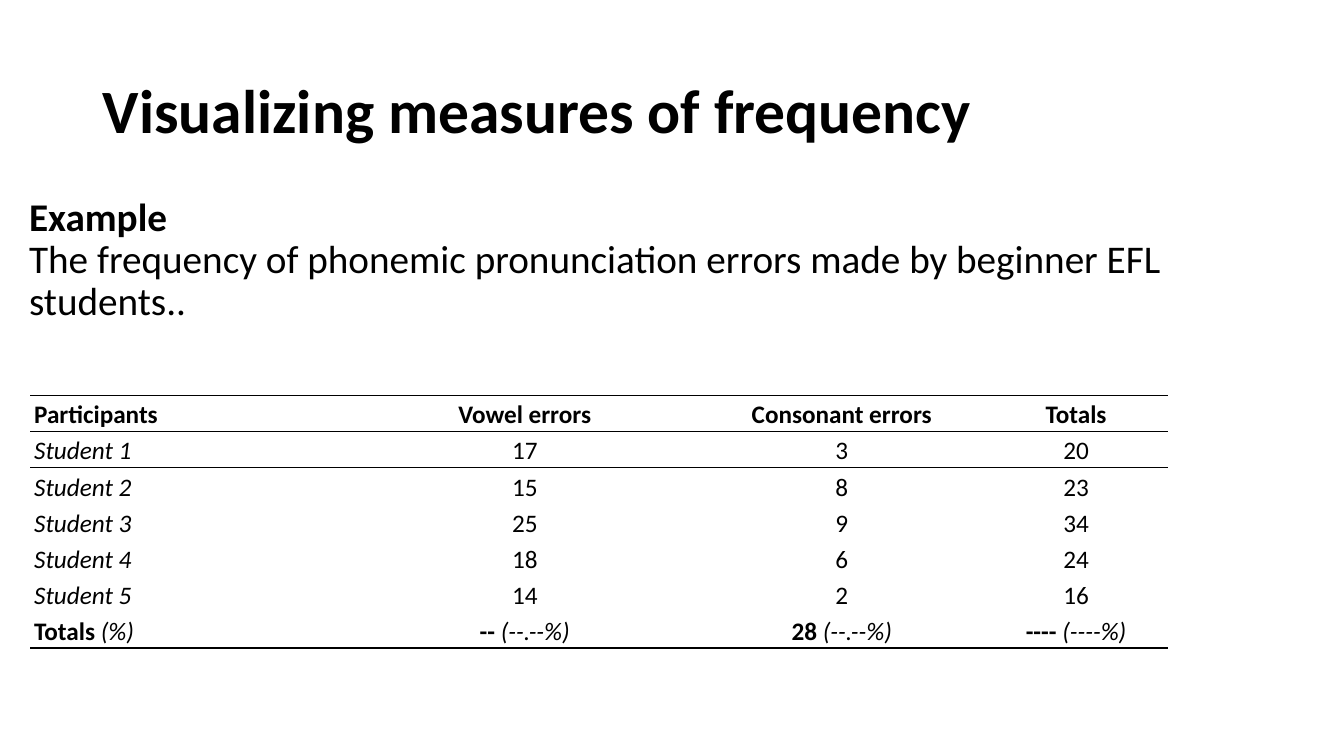
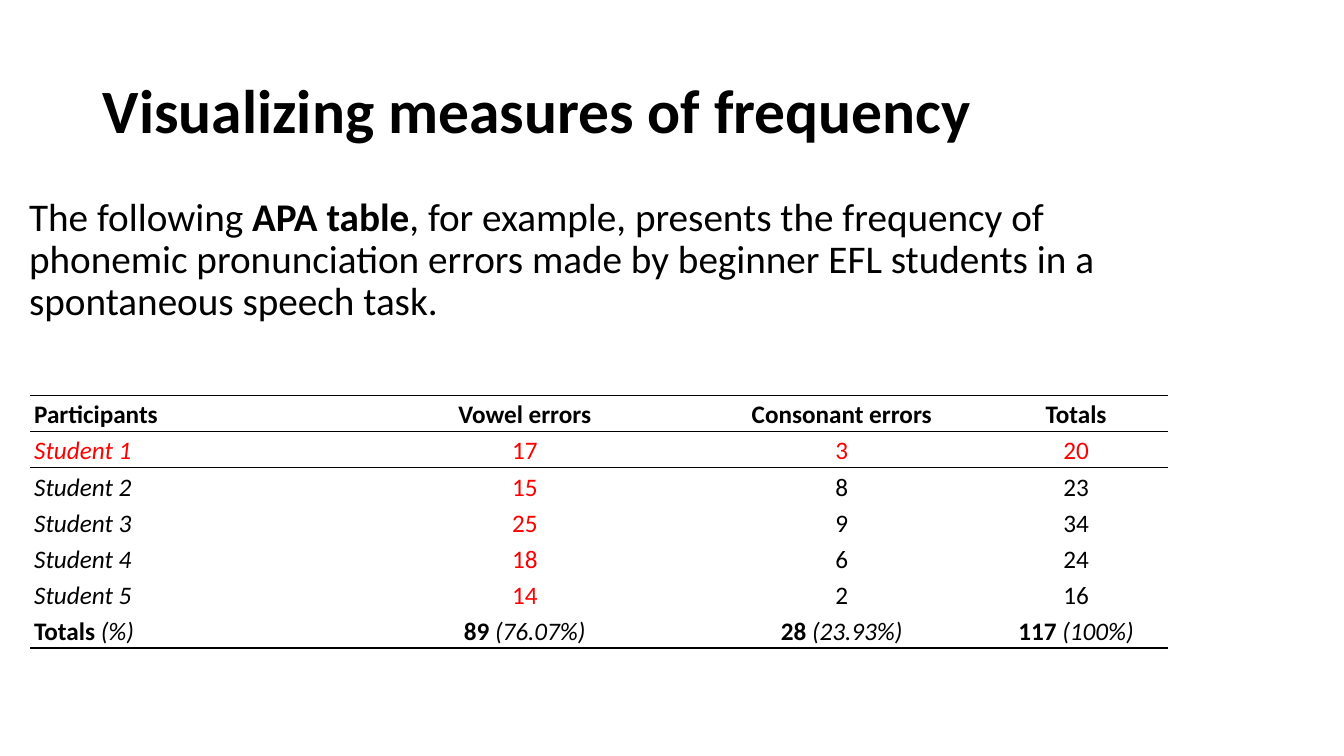
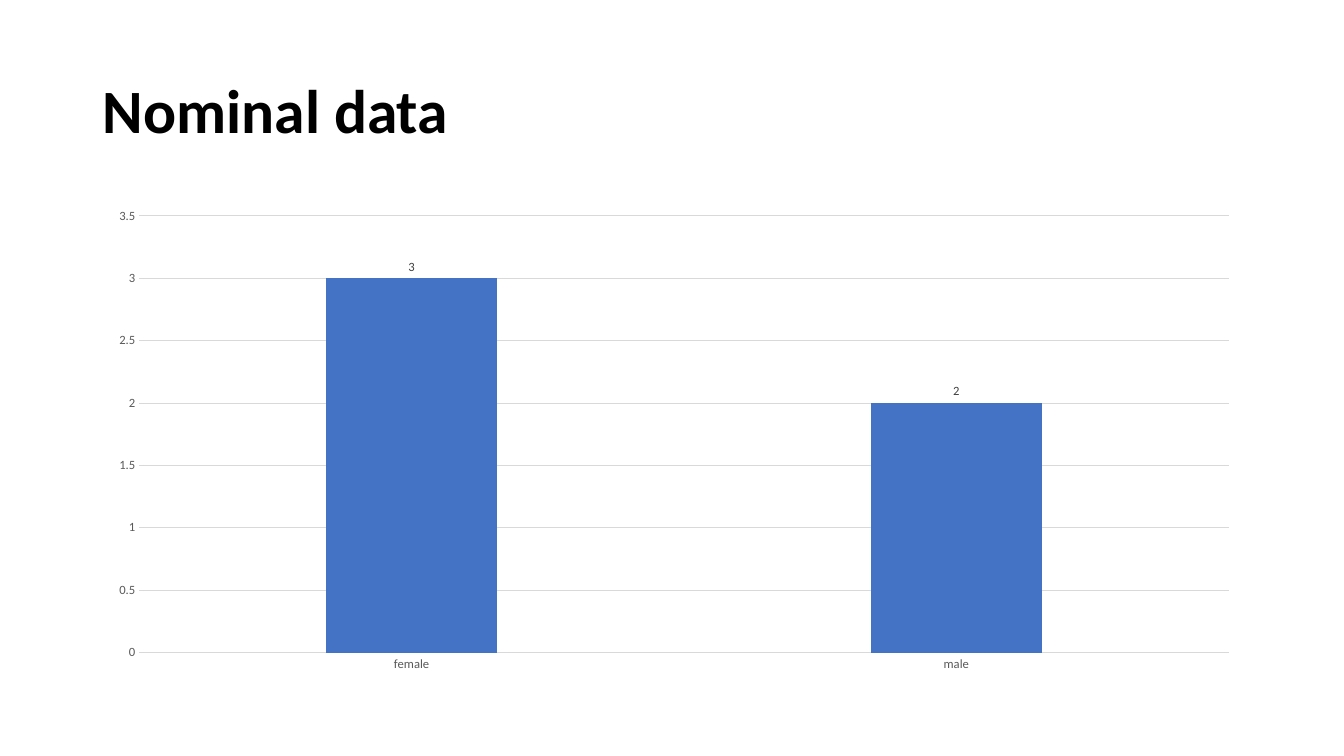
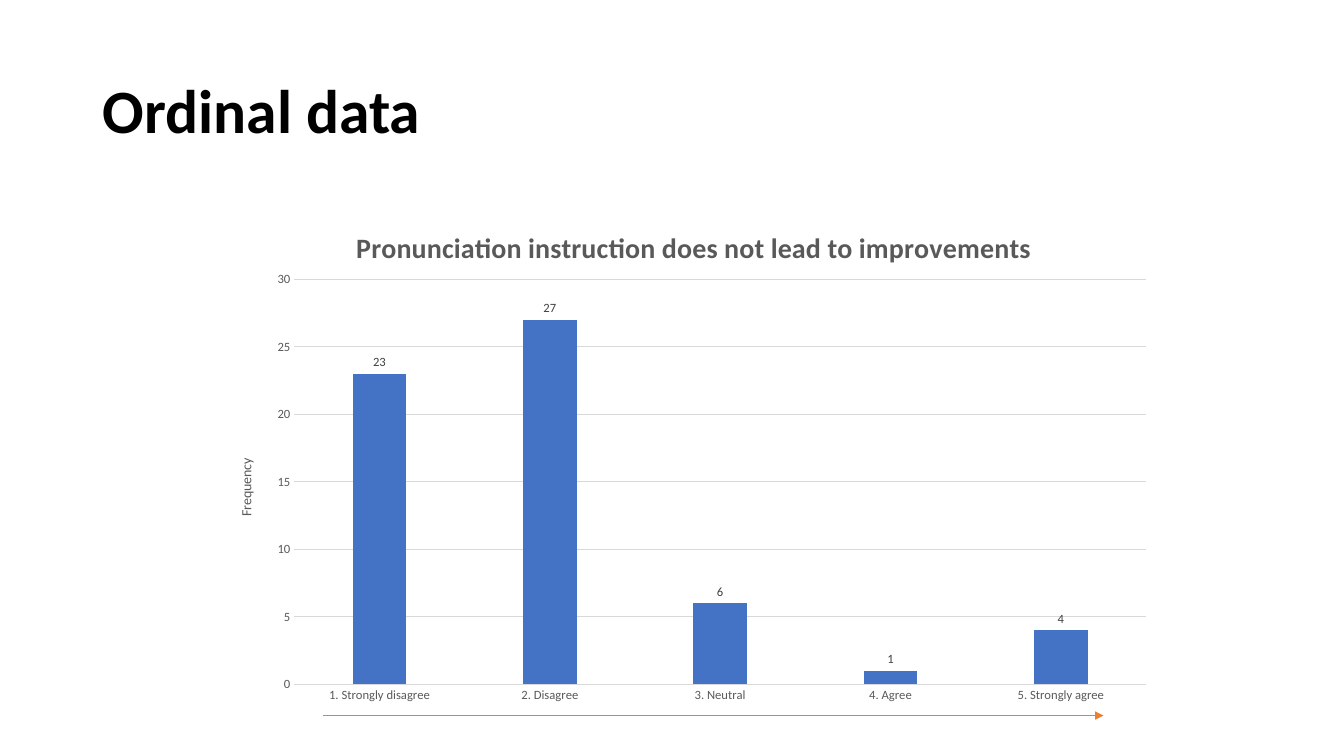
import lxml.etree
import pptx
import pptx.chart.data
import pptx.dml.color
import pptx.enum.chart
import pptx.enum.shapes
import pptx.enum.text
import pptx.oxml.ns
import pptx.util

Cm = pptx.util.Cm
Pt = pptx.util.Pt
RGBColor = pptx.dml.color.RGBColor
qn = pptx.oxml.ns.qn
Align = pptx.enum.text.PP_ALIGN
Anchor = pptx.enum.text.MSO_ANCHOR

BLACK = RGBColor(0x00, 0x00, 0x00)
RED = RGBColor(0xFF, 0x00, 0x00)
BLUE = RGBColor(0x44, 0x72, 0xC4)
ORANGE = RGBColor(0xED, 0x7D, 0x31)
GRID_GRAY = RGBColor(0xD9, 0xD9, 0xD9)
AXIS_GRAY = RGBColor(0x59, 0x59, 0x59)
LABEL_GRAY = RGBColor(0x40, 0x40, 0x40)

FONT = "Calibri"
PLAIN = {}
BOLD = {"bold": True}
ITALIC = {"italic": True}
NO_TABLE_STYLE = "{2D5ABB26-0587-4C30-8999-92F81FD0307C}"
TITLE_AND_BODY, TITLE_ONLY = 1, 5

COLUMN_WIDTHS = (7.77, 0.25, 8.79, 7.19, 4.62)
ROW_HEIGHT = 0.91
HEADINGS = ("Participants", "", "Vowel errors", "Consonant errors", "Totals")
ERRORS = ((17, 3), (15, 8), (25, 9), (18, 6), (14, 2))


def apply_format(target, formats):
    for name, value in formats.items():
        setattr(target, name, value)


def set_font(font, size, color=BLACK, **formats):
    apply_format(font, {"name": FONT, "size": Pt(size), "bold": False, "italic": False, **formats})
    font.color.rgb = color


def set_line(line, color, width):
    line.color.rgb = color
    line.width = Pt(width)


def place(shape, left, top, width, height):
    apply_format(shape, {"left": Cm(left), "top": Cm(top), "width": Cm(width), "height": Cm(height)})


def set_layout(parent, index, **parts):
    for previous in parent.findall(qn("c:layout")):
        parent.remove(previous)
    layout = lxml.etree.Element(qn("c:layout"))
    manual = lxml.etree.SubElement(layout, qn("c:manualLayout"))
    for name, value in parts.items():
        lxml.etree.SubElement(manual, qn("c:" + name)).set("val", str(value))
    parent.insert(index, layout)


def set_border(cell, side):
    line = lxml.etree.Element(qn("a:" + side), w=str(Pt(1)))
    fill = lxml.etree.SubElement(line, qn("a:solidFill"))
    lxml.etree.SubElement(fill, qn("a:srgbClr"), val=str(BLACK))
    cell._tc.get_or_add_tcPr().insert(0, line)


class Deck:
    def __init__(self):
        self.presentation = pptx.Presentation()
        self.presentation.slide_width = Cm(33.87)
        self.presentation.slide_height = Cm(19.05)
        self.slide = None

    def start(self, title, layout):
        self.slide = self.presentation.slides.add_slide(self.presentation.slide_layouts[layout])
        for holder in list(self.slide.placeholders):
            if holder.placeholder_format.idx > 1:
                holder.element.getparent().remove(holder.element)
        heading = self.slide.shapes.title
        place(heading, 2.34, 1.02, 29.21, 3.68)
        self.fill_frame(heading.text_frame, [[(title, BOLD)]], 44)

    def fill_frame(self, frame, paragraphs, size):
        apply_format(frame, {"word_wrap": True, "vertical_anchor": Anchor.MIDDLE,
                             "auto_size": pptx.enum.text.MSO_AUTO_SIZE.NONE})
        for number, runs in enumerate(paragraphs):
            paragraph = frame.add_paragraph() if number else frame.paragraphs[0]
            self.fill_paragraph(paragraph, runs, size, alignment=Align.LEFT,
                                line_spacing=0.9, space_before=Pt(0))

    def fill_paragraph(self, paragraph, runs, size, color=BLACK, **formats):
        apply_format(paragraph, formats)
        for text, emphasis in runs:
            run = paragraph.add_run()
            run.text = text
            set_font(run.font, size, color, **emphasis)

    def statement(self, paragraphs):
        body = self.slide.placeholders[1]
        place(body, 0.48, 3.61, 29.21, 5.92)
        self.fill_frame(body.text_frame, paragraphs, 28)
        for paragraph in body.text_frame.paragraphs:
            properties = paragraph._p.get_or_add_pPr()
            properties.set("marL", "0")
            properties.set("indent", "0")
            lxml.etree.SubElement(properties, qn("a:buNone"))

    def error_table(self, totals, highlighted=False):
        rows = [[[(heading, BOLD)] for heading in HEADINGS]]
        for number, (vowels, consonants) in enumerate(ERRORS, 1):
            counts = [[(str(count), PLAIN)] for count in (vowels, consonants, vowels + consonants)]
            rows.append([[(f"Student {number}", ITALIC)], [], *counts])
        sums = [[(amount + " ", BOLD), (share, ITALIC)] for amount, share in totals]
        rows.append([[("Totals ", BOLD), ("(%)", ITALIC)], [], *sums])

        frame = self.slide.shapes.add_table(
            len(rows), len(HEADINGS), Cm(0.76), Cm(9.96),
            Cm(sum(COLUMN_WIDTHS)), Cm(ROW_HEIGHT * len(rows)))
        frame.element.xpath(".//a:tableStyleId")[0].text = NO_TABLE_STYLE
        table = frame.table
        apply_format(table, {"first_row": False, "horz_banding": False})
        for column, width in zip(table.columns, COLUMN_WIDTHS):
            column.width = Cm(width)
        last = len(rows) - 1
        for row, contents in enumerate(rows):
            table.rows[row].height = Cm(ROW_HEIGHT)
            for column, runs in enumerate(contents):
                cell = table.cell(row, column)
                apply_format(cell, {"margin_left": Cm(0.1), "margin_right": Cm(0.1),
                                    "margin_top": 0, "margin_bottom": 0})
                cell.fill.background()
                if row in (0, last):
                    set_border(cell, "lnB")
                if row in (0, 1):
                    set_border(cell, "lnT")
                marked = highlighted and (row == 1 or column == 2 and 0 < row < last)
                self.fill_paragraph(
                    cell.text_frame.paragraphs[0], [run for run in runs if run[0]], 18,
                    RED if marked else BLACK, line_spacing=1.15,
                    alignment=Align.CENTER if column else Align.LEFT)

    def column_chart(self, box, counts, maximum, step, plot_box):
        data = pptx.chart.data.CategoryChartData()
        data.categories = list(counts)
        data.add_series("Series 1", list(counts.values()))
        chart = self.slide.shapes.add_chart(
            pptx.enum.chart.XL_CHART_TYPE.COLUMN_CLUSTERED, *map(Cm, box), data).chart
        apply_format(chart, {"has_legend": False, "has_title": False})
        set_font(chart.font, 10)

        plot = chart.plots[0]
        apply_format(plot, {"gap_width": 219, "overlap": -27,
                            "vary_by_categories": False, "has_data_labels": True})
        fill = plot.series[0].format.fill
        fill.solid()
        fill.fore_color.rgb = BLUE
        apply_format(plot.data_labels, {
            "show_value": True, "position": pptx.enum.chart.XL_LABEL_POSITION.OUTSIDE_END})
        set_font(plot.data_labels.font, 9, LABEL_GRAY)

        categories, values = chart.category_axis, chart.value_axis
        for axis in (categories, values):
            axis.major_tick_mark = axis.minor_tick_mark = pptx.enum.chart.XL_TICK_MARK.NONE
            set_font(axis.tick_labels.font, 9, AXIS_GRAY)
        set_line(categories.format.line, GRID_GRAY, 0.75)
        apply_format(values, {"minimum_scale": 0, "maximum_scale": maximum,
                              "major_unit": step, "has_major_gridlines": True})
        values.format.line.fill.background()
        set_line(values.major_gridlines.format.line, GRID_GRAY, 0.75)
        x, y, w, h = plot_box
        set_layout(chart.element.find(".//" + qn("c:plotArea")), 0, layoutTarget="inner",
                   xMode="edge", yMode="edge", x=x, y=y, w=w, h=h)
        return chart

    def chart_titles(self, chart, question, measure):
        for owner, text, size, emphasis in ((chart.chart_title, question, 20, BOLD),
                                            (chart.value_axis.axis_title, measure, 10, PLAIN)):
            self.fill_paragraph(owner.text_frame.paragraphs[0], [(text, emphasis)], size, AXIS_GRAY)
        set_layout(chart.element.find(qn("c:chart")).find(qn("c:title")), 1,
                   xMode="edge", yMode="edge", x=0.14, y=0.05)

    def arrow(self, left, right, top):
        connector = self.slide.shapes.add_connector(
            pptx.enum.shapes.MSO_CONNECTOR.STRAIGHT, Cm(left), Cm(top), Cm(right), Cm(top))
        set_line(connector.line, ORANGE, 0.5)
        properties = connector.element.spPr
        lxml.etree.SubElement(properties.find(qn("a:ln")), qn("a:tailEnd"), type="triangle")
        lxml.etree.SubElement(properties, qn("a:effectLst"))


def main():
    deck = Deck()

    frequency_title = "Visualizing measures of frequency"
    deck.start(frequency_title, TITLE_AND_BODY)
    deck.statement([
        [("Example", BOLD)],
        [("The frequency of phonemic pronunciation errors made by beginner EFL students..", PLAIN)],
    ])
    deck.error_table((("--", "(--.--%)"), ("28", "(--.--%)"), ("----", "(----%)")))

    deck.start(frequency_title, TITLE_AND_BODY)
    deck.statement([[
        ("The following ", PLAIN),
        ("APA table", BOLD),
        (", for example, presents the frequency of phonemic pronunciation errors made by "
         "beginner EFL students in a spontaneous speech task.", PLAIN),
    ]])
    deck.error_table((("89", "(76.07%)"), ("28", "(23.93%)"), ("117", "(100%)")), highlighted=True)

    deck.start("Nominal data", TITLE_ONLY)
    deck.column_chart((2.34, 5.08, 29.21, 12.09), {"female": 3, "male": 2}, 3.5, 0.5,
                      (0.04, 0.03, 0.94, 0.91))

    deck.start("Ordinal data", TITLE_ONLY)
    answers = {"1. Strongly disagree": 23, "2. Disagree": 27, "3. Neutral": 6,
               "4. Agree": 1, "5. Strongly agree": 4}
    agreement = deck.column_chart((5.51, 4.95, 23.85, 13.08), answers, 30, 5,
                                  (0.08, 0.16, 0.9, 0.78))
    deck.chart_titles(agreement, "Pronunciation instruction does not lead to improvements", "Frequency")
    deck.arrow(8.15, 27.81, 18.03)

    deck.presentation.save("out.pptx")


if __name__ == "__main__":
    main()
